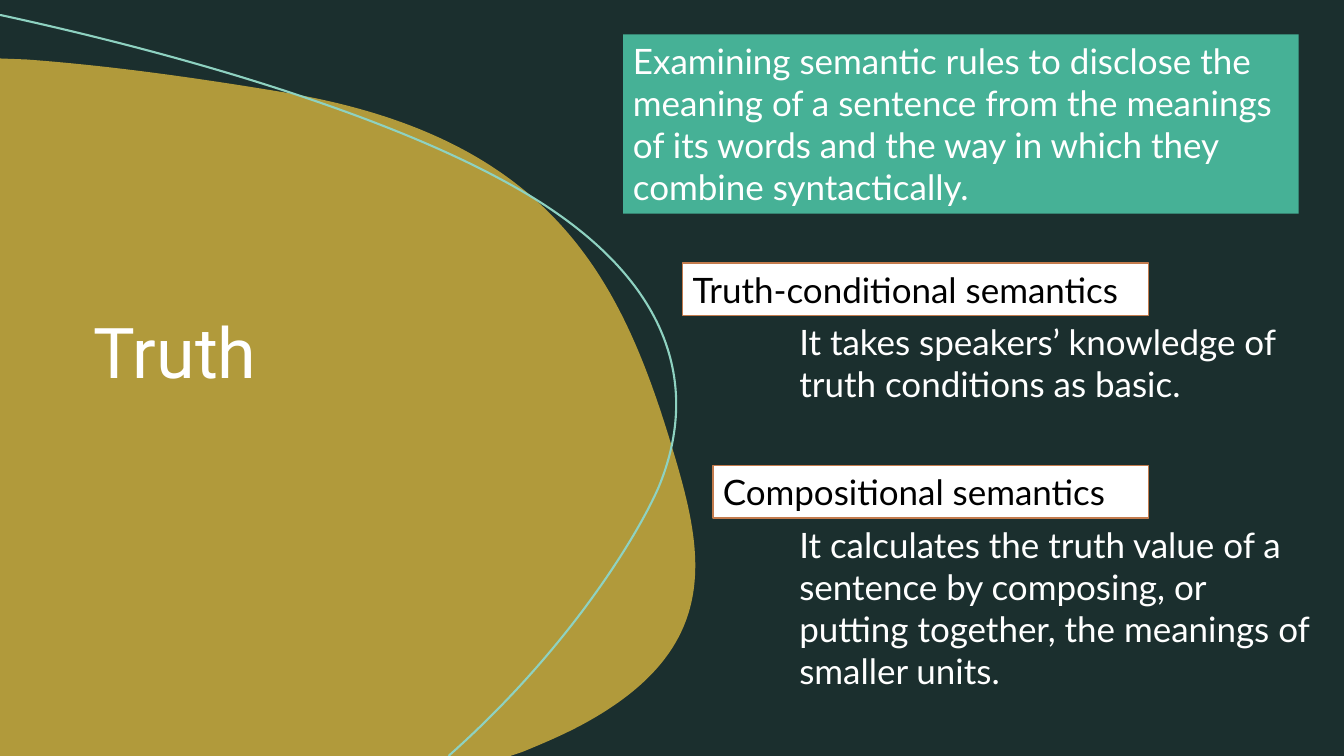
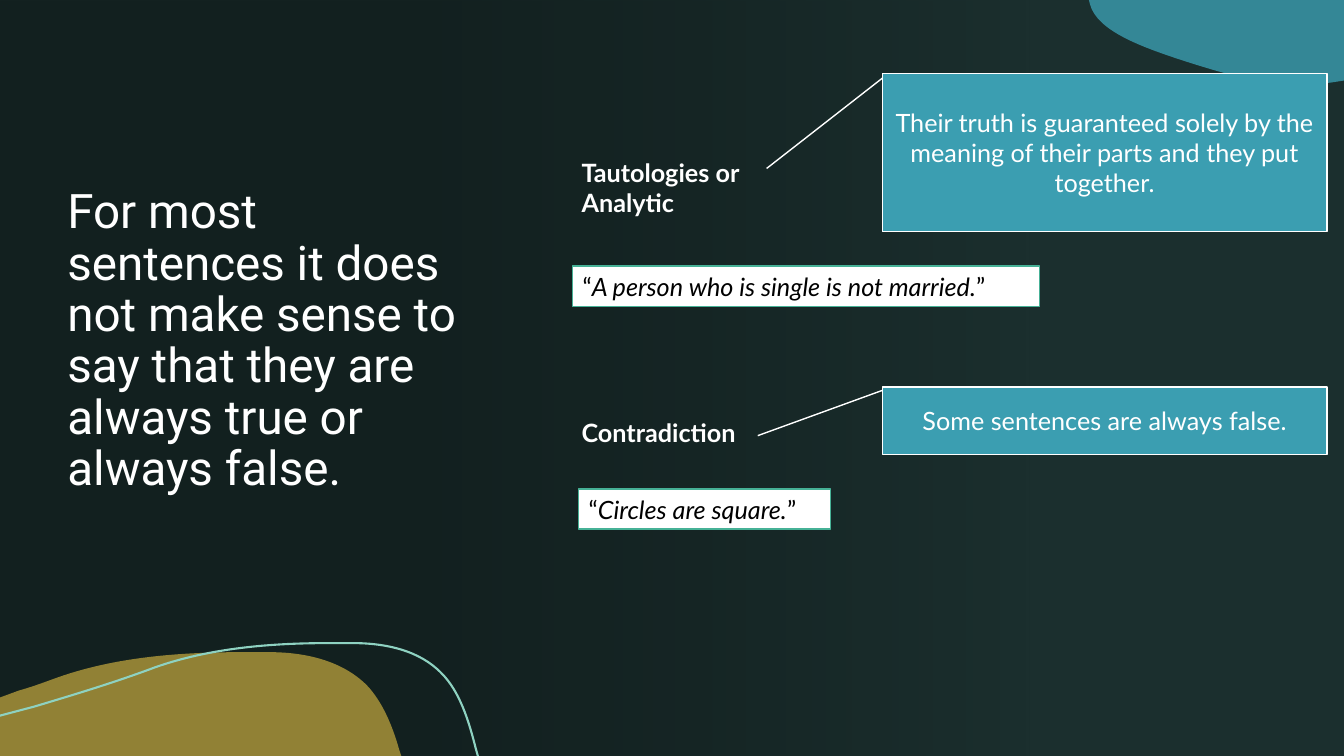
import lxml.etree
import pptx
import pptx.dml.color
import pptx.enum.shapes
import pptx.enum.text
import pptx.oxml.ns
import pptx.util

Inches = pptx.util.Inches
SHAPE = pptx.enum.shapes.MSO_SHAPE
ANCHOR = pptx.enum.text.MSO_ANCHOR
ALIGN = pptx.enum.text.PP_ALIGN
qn = pptx.oxml.ns.qn

COLORS = {
    "night": "1B2F2E",
    "olive": "B19A3B",
    "teal": "3B9EB1",
    "green": "46B196",
    "mint": "8ED2C1",
    "copper": "C37B4D",
    "white": "FFFFFF",
    "black": "000000",
}
BODY_FONT, TITLE_FONT = "Lato", "Roboto"
SLIDE_WIDTH, SLIDE_HEIGHT = 13.33, 7.5

HERO_BLOB = (0, 0.58, 6.9, 6.92), [
    (0, 0.58), (0.26, 0.59),
    (1.08, 0.65, 1.93, 0.77, 2.78, 0.91),
    (5.42, 1.34, 6.13, 2.71, 6.63, 4.32),
    (6.96, 5.4, 7.24, 6.38, 5.81, 7.17),
    (5.61, 7.28, 5.4, 7.37, 5.18, 7.46),
    (5.06, 7.5), (0, 7.5),
]
HERO_CURVE = (0, 0.15, 6.7, 7.35), [
    (0, 0.15), (0.01, 0.15),
    (2.08, 0.6, 3.86, 1.18, 4.97, 1.78),
    (6.64, 2.67, 6.97, 3.79, 6.53, 4.84),
    (6.32, 5.32, 5.64, 6.44, 4.46, 7.49),
    (4.45, 7.5),
]
TOP_BLOB = (0, 0, 2.53, 0.83), [
    (2.53, 0), (0, 0), (0.01, 0.04),
    (0.08, 0.31, 0.53, 0.47, 0.96, 0.61),
    (1.31, 0.72, 1.68, 0.84, 2.13, 0.83),
    (2.22, 0.83, 2.31, 0.83, 2.4, 0.82),
    (2.53, 0.8),
]
BOTTOM_BLOB = (0, 0.09, 3.98, 1.03), [
    (2.4, 0.09),
    (1.77, 0.09, 1.11, 0.14, 0.52, 0.36),
    (0.41, 0.4, 0.3, 0.44, 0.19, 0.47),
    (0, 0.54), (0, 1.12), (3.98, 1.12), (3.96, 1.06),
    (3.89, 0.81, 3.79, 0.58, 3.64, 0.42),
    (3.39, 0.17, 3.02, 0.09, 2.67, 0.09),
    (2.58, 0.09, 2.49, 0.09, 2.4, 0.09),
]
BOTTOM_CURVE = (0, 0, 4.74, 1.12), [
    (4.74, 1.12), (4.72, 1.05),
    (4.65, 0.77, 4.56, 0.48, 4.38, 0.3),
    (4.16, 0.07, 3.82, 0, 3.5, 0),
    (3.26, 0),
    (2.68, 0, 2.08, 0.05, 1.54, 0.24),
    (1.14, 0.39, 0.74, 0.51, 0.34, 0.63),
    (0, 0.72),
]


def rgb(name):
    return pptx.dml.color.RGBColor.from_string(COLORS[name])


def inches(box):
    return [Inches(length) for length in box]


def paint(shape, fill=None, line=None, line_width=1, opacity=100):
    shape.shadow.inherit = False
    if fill:
        shape.fill.solid()
        shape.fill.fore_color.rgb = rgb(fill)
        if opacity < 100:
            color = shape.element.spPr.find(qn("a:solidFill"))[0]
            lxml.etree.SubElement(color, qn("a:alpha"), val=str(opacity * 1000))
    else:
        shape.fill.background()
    if line:
        shape.line.color.rgb = rgb(line)
        shape.line.width = pptx.util.Pt(line_width)
    else:
        shape.line.fill.background()


def write(shape, text, size=18, color="white", font=BODY_FONT, bold=False,
          quoted=False, align=ALIGN.LEFT, anchor=ANCHOR.TOP, spacing=1.0):
    frame = shape.text_frame
    frame.word_wrap = True
    frame.vertical_anchor = anchor
    paragraph = frame.paragraphs[0]
    paragraph.alignment = align
    paragraph.line_spacing = spacing
    parts = [("“", False), (text, True), ("”", False)] if quoted else [(text, False)]
    for words, italic in parts:
        run = paragraph.add_run()
        run.text = words
        run.font.name = font
        run.font.size = pptx.util.Pt(size)
        run.font.bold = bold
        run.font.italic = italic
        run.font.color.rgb = rgb(color)


def text_area(slide, box, text, **text_format):
    write(slide.shapes.add_textbox(*inches(box)), text, **text_format)


def panel(slide, box, text, fill, line=None, kind=SHAPE.RECTANGLE, adjust=(), **text_format):
    shape = slide.shapes.add_shape(kind, *inches(box))
    for index, value in enumerate(adjust):
        shape.adjustments[index] = value
    paint(shape, fill, line)
    write(shape, text, **text_format)


def slide_title(slide, box, text, size):
    text_area(slide, box, text, size=size, font=TITLE_FONT,
              anchor=ANCHOR.BOTTOM, spacing=0.9)


def bend(path_element, bounds, outline):
    left, top, width, height = bounds
    closing = path_element.find(qn("a:close"))
    for child in list(path_element):
        path_element.remove(child)
    path_element.set("w", str(Inches(width)))
    path_element.set("h", str(Inches(height)))
    for index, segment in enumerate(outline):
        tag = "a:cubicBezTo" if len(segment) == 6 else "a:lnTo" if index else "a:moveTo"
        command = lxml.etree.SubElement(path_element, qn(tag))
        for x, y in zip(segment[::2], segment[1::2]):
            lxml.etree.SubElement(command, qn("a:pt"),
                                  x=str(Inches(x - left)), y=str(Inches(y - top)))
    if closing is not None:
        path_element.append(closing)


def outline_shape(shapes, origin, drawing, closed=True, **look):
    bounds, outline = drawing
    left, top, width, height = bounds
    corners = [inches(segment[-2:]) for segment in outline]
    builder = shapes.build_freeform(*corners[0])
    builder.add_line_segments(corners[1:], close=closed)
    shape = builder.convert_to_shape()
    bend(shape.element.spPr.find(".//" + qn("a:path")), bounds, outline)
    shape.left, shape.top = inches((origin[0] + left, origin[1] + top))
    shape.width, shape.height = inches((width, height))
    paint(shape, **look)


def swoosh(shapes, origin, blob, curve, opacity=100):
    outline_shape(shapes, origin, blob, fill="olive", opacity=opacity)
    outline_shape(shapes, origin, curve, closed=False, line="mint", line_width=1.5)


def shade(slide, box):
    veil = slide.shapes.add_shape(SHAPE.RECTANGLE, *inches(box))
    paint(veil, "black")
    solid = veil.element.spPr.find(qn("a:solidFill"))
    gradient = lxml.etree.Element(qn("a:gradFill"), rotWithShape="1")
    stops = lxml.etree.SubElement(gradient, qn("a:gsLst"))
    for position, opacity in ((0, 0), (33, 20), (58, 30), (100, 30)):
        stop = lxml.etree.SubElement(stops, qn("a:gs"), pos=str(position * 1000))
        color = lxml.etree.SubElement(stop, qn("a:srgbClr"), val=COLORS["black"])
        lxml.etree.SubElement(color, qn("a:alpha"), val=str(opacity * 1000))
    lxml.etree.SubElement(gradient, qn("a:lin"), ang=str(180 * 60000), scaled="0")
    solid.getparent().replace(solid, gradient)


def theory(slide, box, term, term_width, explanation):
    left, top, width, height = box
    term_height, term_right = 0.52, left + 3.56
    panel(slide, (term_right - term_width, top, term_width, term_height), term,
          "white", "copper", size=25, color="black")
    text_area(slide, (left, top + term_height, width, height - term_height),
              explanation, size=25)


def sentence_kind(slide, box, name, name_box, meaning, leader, example, example_box):
    left, top, width, height = box
    name_top, name_height = name_box
    example_indent, example_width = example_box
    meaning_width = 4.41
    text_area(slide, (left, top + name_top, 2, name_height), name, bold=True)
    panel(slide, (left + width - meaning_width, top, meaning_width, height), meaning,
          "teal", "white", kind=SHAPE.LINE_CALLOUT_1, adjust=leader,
          align=ALIGN.CENTER, anchor=ANCHOR.MIDDLE)
    panel(slide, (left + example_indent, top + height + 0.34, example_width, 0.4),
          example, "white", "green", color="black", quoted=True)


def truth_slide(slide):
    swoosh(slide.shapes, (0, 0), HERO_BLOB, HERO_CURVE)
    slide_title(slide, (0.83, 2.92, 2.96, 1.03), "Truth", 50)
    panel(slide, (6.18, 0.34, 6.7, 1.78),
          "Examining semantic rules to disclose the meaning of a sentence from the "
          "meanings of its words and the way in which they combine syntactically.",
          "green", size=25)
    theory(slide, (7.83, 2.61, 5.34, 1.46), "Truth-conditional semantics", 4.62,
           "It takes speakers’ knowledge of truth conditions as basic.")
    theory(slide, (7.83, 4.62, 5.34, 2.3), "Compositional semantics", 4.32,
           "It calculates the truth value of a sentence by composing, or putting "
           "together, the meanings of smaller units.")


def always_true_or_false_slide(slide):
    shade(slide, (0, 0, 10.21, SLIDE_HEIGHT))
    slide_title(slide, (0.57, 1.64, 4.17, 3.33),
                "For most sentences it does not make sense to say that they are "
                "always true or always false.", 34)
    outline_shape(slide.shapes, (SLIDE_WIDTH - 2.53, 0), TOP_BLOB, fill="teal", opacity=80)
    swoosh(slide.shapes.add_group_shape().shapes, (0, SLIDE_HEIGHT - 1.12),
           BOTTOM_BLOB, BOTTOM_CURVE, opacity=80)
    sentence_kind(slide, (5.67, 0.73, 7.49, 1.57),
                  "Tautologies or Analytic", (0.78, 0.71),
                  "Their truth is guaranteed solely by the meaning of their parts "
                  "and they put together.", (0.03, 0, 0.6, -0.26),
                  "A person who is single is not married.", (0.01, 4.63))
    sentence_kind(slide, (5.67, 3.84, 7.49, 0.67),
                  "Contradiction", (0.25, 0.4),
                  "Some sentences are always false.", (0.05, 0, 0.72, -0.28),
                  "Circles are square.", (0.07, 2.5))


def main():
    deck = pptx.Presentation()
    deck.slide_width, deck.slide_height = inches((SLIDE_WIDTH, SLIDE_HEIGHT))
    backdrop = deck.slide_master.background.fill
    backdrop.solid()
    backdrop.fore_color.rgb = rgb("night")
    for fill_slide in (truth_slide, always_true_or_false_slide):
        fill_slide(deck.slides.add_slide(deck.slide_layouts[6]))
    deck.save("out.pptx")


if __name__ == "__main__":
    main()
